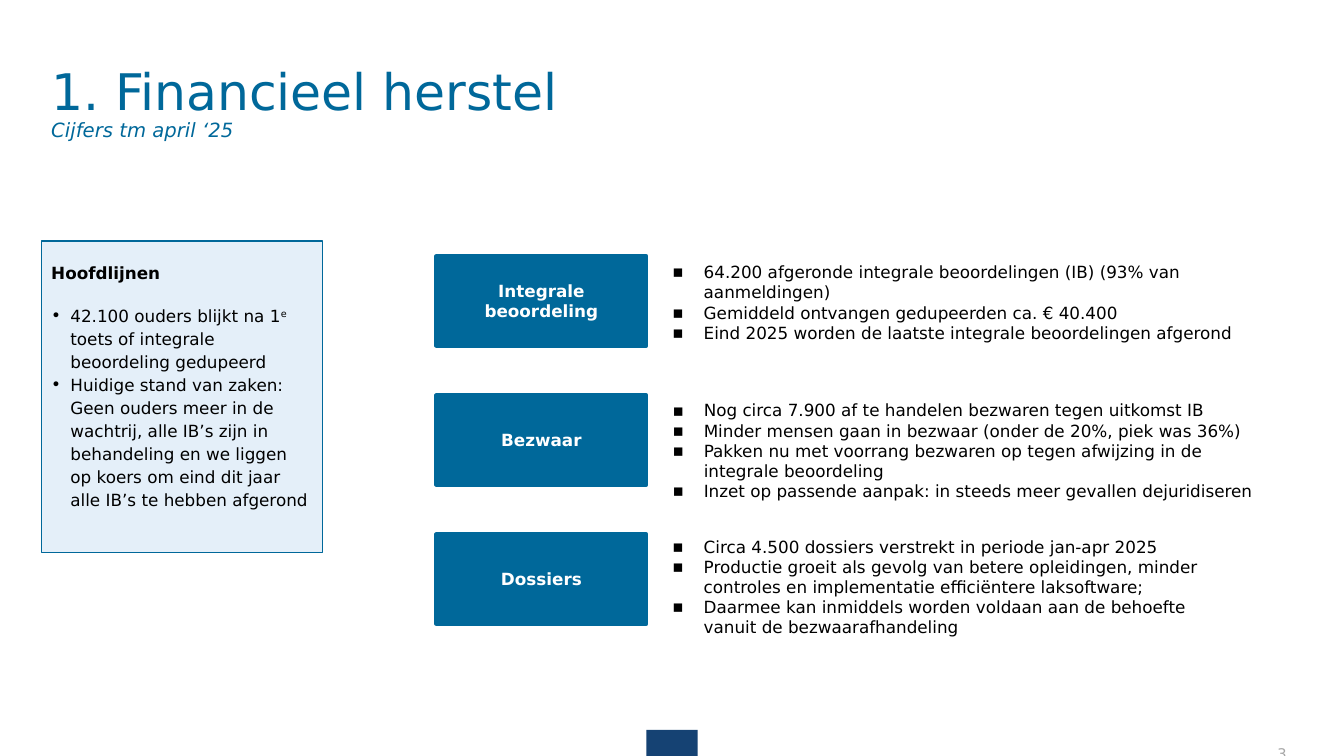
from lxml.etree import SubElement as Sub
from pptx import Presentation
from pptx.dml.color import RGBColor as Rgb
from pptx.enum.shapes import MSO_SHAPE as Kind
from pptx.enum.text import MSO_ANCHOR as Anchor, PP_ALIGN as Align
from pptx.oxml.ns import qn
from pptx.util import Emu, Pt

SCALE = 9144
FONT = "DejaVu Sans"
BLUE, NAVY, PALE = "00689A", "154273", "E4EFF9"
BLACK, WHITE, GREY = "000000", "FFFFFF", "A6A6A6"

ROWS = [
    ("Integrale beoordeling", 6, 557, [
        "64.200 afgeronde integrale beoordelingen (IB) (93% van aanmeldingen)",
        "Gemiddeld ontvangen gedupeerden ca. € 40.400",
        "Eind 2025 worden de laatste integrale beoordelingen afgerond",
    ]),
    ("Bezwaar", 5, 585, [
        "Nog circa 7.900 af te handelen bezwaren tegen uitkomst IB",
        "Minder mensen gaan in bezwaar (onder de 20%, piek was 36%)",
        "Pakken nu met voorrang bezwaren op tegen afwijzing in de integrale beoordeling",
        "Inzet op passende aanpak: in steeds meer gevallen dejuridiseren",
    ]),
    ("Dossiers", 2, 557, [
        "Circa 4.500 dossiers verstrekt in periode jan-apr 2025",
        "Productie groeit als gevolg van betere opleidingen, minder controles "
        "en implementatie efficiëntere laksoftware;",
        "Daarmee kan inmiddels worden voldaan aan de behoefte vanuit de bezwaarafhandeling",
    ]),
]


def px(n):
    """Turn px into EMU."""
    return Emu(n * SCALE)


def tint(code):
    """Turn a hex string into a colour."""
    return Rgb.from_string(code)


def rect(slide, box, fill, line=None, width=1):
    """Draw a filled rectangle, with an outline if a colour is given."""
    shape = slide.shapes.add_shape(Kind.RECTANGLE, *map(px, box))
    shape.shadow.inherit = False
    shape.fill.solid()
    shape.fill.fore_color.rgb = tint(fill)
    if line:
        shape.line.color.rgb = tint(line)
        shape.line.width = Pt(width)
    else:
        shape.line.fill.background()
    return shape


def label(slide, box):
    """Add an empty text box."""
    return slide.shapes.add_textbox(*map(px, box))


def frame(shape, pad=(10, 5, 10, 5), anchor=Anchor.TOP):
    """Set wrapping, insets and anchor, and return the text frame."""
    body = shape.text_frame
    body.word_wrap = True
    body.vertical_anchor = anchor
    (body.margin_left, body.margin_top,
     body.margin_right, body.margin_bottom) = map(px, pad)
    return body


def write(body, text, size=12, color=BLACK, bold=False, italic=False,
          align=Align.LEFT, space=1.0, before=0, mark=None, indent=0):
    """Write a paragraph; a list of parts has every second one raised."""
    first = body.paragraphs[0]
    para = body.add_paragraph() if first.runs else first
    if mark:
        props = para._p.get_or_add_pPr()
        props.set("marL", str(px(indent)))
        props.set("indent", str(px(-indent)))
        Sub(props, qn("a:buFont"), typeface=FONT)
        Sub(props, qn("a:buChar"), char=mark)
    para.alignment = align
    para.line_spacing = space
    para.space_before = Pt(before)
    parts = [text] if isinstance(text, str) else text
    for spot, part in enumerate(parts):
        run = para.add_run()
        run.text = part
        font = run.font
        font.name, font.size = FONT, Pt(size)
        font.bold, font.italic = bold, italic
        font.color.rgb = tint(color)
        if spot % 2:
            run._r.get_or_add_rPr().set("baseline", "30000")


def header(slide, box):
    """Write the title and its subtitle."""
    body = frame(label(slide, box), anchor=Anchor.BOTTOM)
    write(body, "1. Financieel herstel", size=36, color=BLUE, space=0.9)
    write(body, "Cijfers tm april ‘25", size=14, color=BLUE, italic=True, space=0.9)


def summary(slide, box):
    """Draw the panel with the main points."""
    body = frame(rect(slide, box, PALE, BLUE), pad=(10, 19, 10, 5))
    write(body, "Hoofdlijnen", bold=True, space=1.14)
    write(body, ["42.100 ouders blijkt na 1", "e", " toets of integrale beoordeling gedupeerd"],
          space=1.14, before=14, mark="•", indent=19)
    write(body, "Huidige stand van zaken: Geen ouders meer in de wachtrij, alle IB’s zijn "
          "in behandeling en we liggen op koers om eind dit jaar alle IB’s te hebben afgerond",
          space=1.14, mark="•", indent=19)


def topic(slide, box, name, drop, wide, points):
    """Draw a topic block with its list to the right."""
    left, top, width, height = box
    body = frame(rect(slide, box, BLUE, BLUE, 3), (24, 5, 24, 5), Anchor.MIDDLE)
    write(body, name, color=WHITE, bold=True, align=Align.CENTER)
    area = (left + width + 26, top + drop, wide, 20 * (len(points) + 1))
    body = frame(label(slide, area), (0, 0, 0, 0))
    for point in points:
        write(body, point, mark="▪", indent=31)


def footer(slide, box):
    """Draw the bottom tab and the page number."""
    left, top, width, height = box
    rect(slide, (left, top, 51, height), NAVY)
    body = frame(label(slide, (left + 88, top + 2, 547, 35)), (10, 5, 0, 5), Anchor.BOTTOM)
    write(body, "3", size=10.5, color=GREY, align=Align.RIGHT)


def main():
    """Build and save the slide."""
    deck = Presentation()
    deck.slide_width, deck.slide_height = px(1333), px(750)
    slide = deck.slides.add_slide(deck.slide_layouts[6])
    footer(slide, (641, 724, 635, 26))
    header(slide, (41, 78, 547, 68))
    summary(slide, (41, 239, 279, 309))
    for spot, row in enumerate(ROWS):
        topic(slide, (433, 254 + 138 * spot, 208, 89), *row)
    deck.save("out.pptx")


if __name__ == "__main__":
    main()
